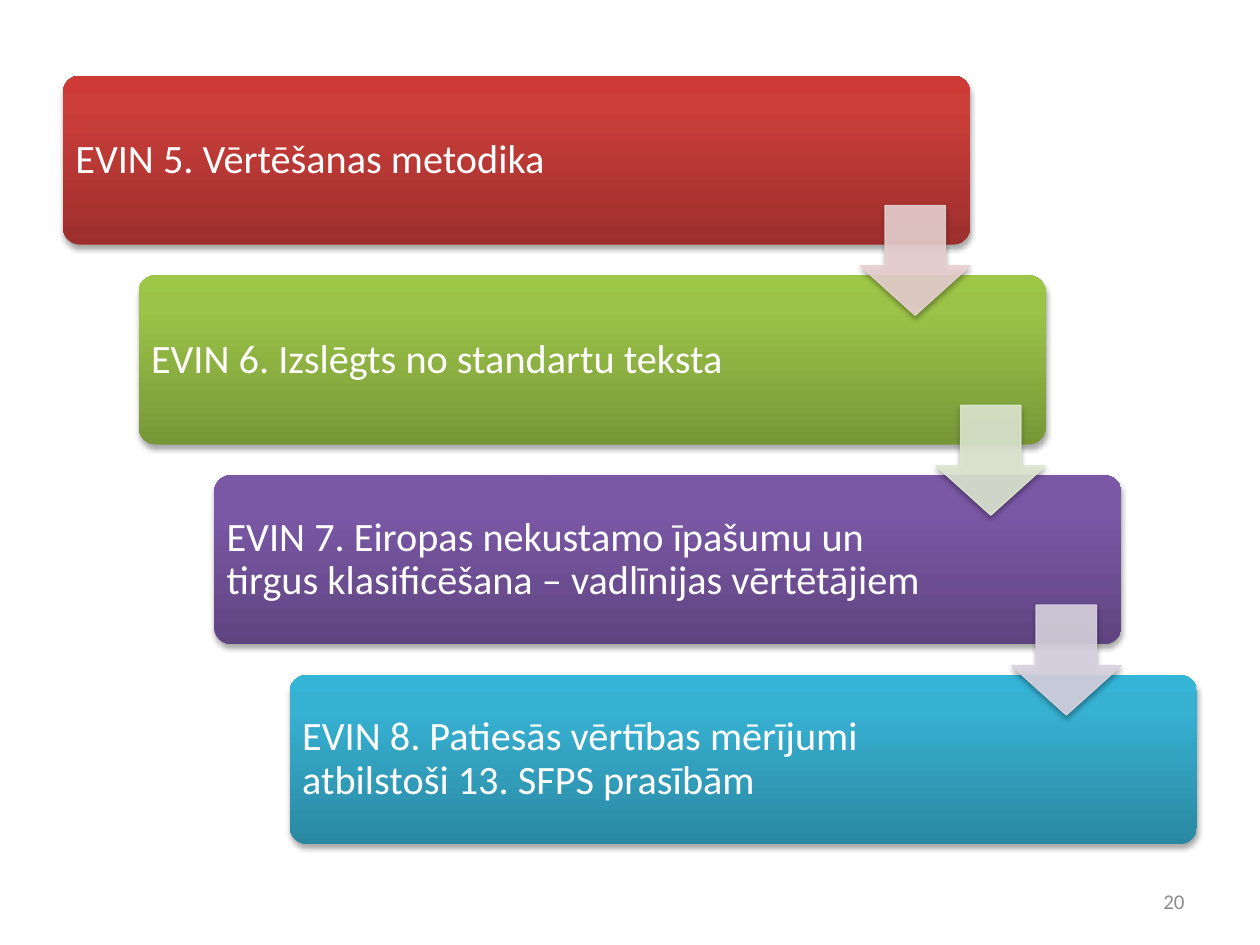
from pptx import Presentation
from pptx import util as u
from pptx.dml.color import RGBColor
from pptx.enum import shapes, text
from pptx.oxml import parse_xml
from pptx.oxml.ns import nsdecls, qn

WIDTH, HEIGHT = 10, 7.5
COLOURS = {
    "step_text": "FFFFFF",
    "page_text": "8C8C8C",
    "shadow": "000000",
    "red": ("9C2F2D", "CB3E3A", "CE3B37"),
    "green": ("779737", "9BC348", "9DC746"),
    "purple": ("5F4480", "7B58A6", "7C57A8"),
    "blue": ("2A88A2", "37B1D2", "34B4D6"),
    "red_arrow": "E8D0D0",
    "green_arrow": "DEE7D1",
    "purple_arrow": "D8D3E0",
}
STEPS = [
    ("red", "EVIN 5. Vērtēšanas metodika"),
    ("green", "EVIN 6. Izslēgts no standartu teksta"),
    ("purple", "EVIN 7. Eiropas nekustamo īpašumu un tirgus klasificēšana – vadlīnijas vērtētājiem"),
    ("blue", "EVIN 8. Patiesās vērtības mērījumi atbilstoši 13. SFPS prasībām"),
]
STAIRCASE = (0.05 * WIDTH, 0.08 * HEIGHT, 0.9 * WIDTH, 6.1)
PAGE_NUMBER = (7.17, 6.95, 2.33, 0.4)
CARD_WIDTH_SHARE = 0.8
CARD_HEIGHT_SHARE = 0.22
LABEL_SHARE = 0.795
ARROW_SHARE = 0.65
INSETS = dict.fromkeys(("margin_left", "margin_right", "margin_top", "margin_bottom"), u.Inches(0.1))


def apply_format(target, values):
    """Set each named attribute of the target."""
    for name, value in values.items():
        setattr(target, name, value)


def inches(box):
    """Convert a box in inches to lengths."""
    return [u.Inches(side) for side in box]


def add_shadow(part):
    """Give the part a soft shadow straight below it."""
    part.shadow.inherit = False
    effects = part._element.spPr.find(qn("a:effectLst"))
    effects.append(parse_xml(
        f'<a:outerShdw {nsdecls("a")} blurRad="{u.Pt(3.1)}" dist="{u.Pt(1.8)}" dir="5400000" '
        f'rotWithShape="0"><a:srgbClr val="{COLOURS["shadow"]}"><a:alpha val="35000"/>'
        '</a:srgbClr></a:outerShdw>'))


def add_label(slide, box, wording, colour, size, frame_format, paragraph_format):
    """Write one paragraph in a wrapped, vertically centred text box."""
    frame = slide.shapes.add_textbox(*inches(box)).text_frame
    apply_format(frame, {"word_wrap": True, "vertical_anchor": text.MSO_ANCHOR.MIDDLE, **frame_format})
    paragraph = frame.paragraphs[0]
    apply_format(paragraph, paragraph_format)
    run = paragraph.add_run()
    run.text = wording
    apply_format(run.font, {"name": "Calibri", "size": u.Pt(size)})
    run.font.color.rgb = RGBColor.from_string(COLOURS[colour])


def add_card(slide, box, colour, wording):
    """Place a rounded gradient card with its label."""
    left, top, width, height = box
    card = slide.shapes.add_shape(shapes.MSO_SHAPE.ROUNDED_RECTANGLE, *inches(box))
    card.adjustments[0] = 0.1
    card.fill.gradient()
    card.fill.gradient_angle = 90
    stops = card._element.spPr.find(qn("a:gradFill")).find(qn("a:gsLst"))
    for stop in list(stops):
        stops.remove(stop)
    for share, shade in zip((0, 80, 100), COLOURS[colour]):
        stops.append(parse_xml(
            f'<a:gs {nsdecls("a")} pos="{share * 1000}"><a:srgbClr val="{shade}"/></a:gs>'))
    card.line.fill.background()
    add_shadow(card)
    add_label(slide, (left, top, width * LABEL_SHARE, height), wording, "step_text", 23,
              INSETS, {"line_spacing": 0.9})


def add_arrow(slide, box, colour):
    """Place a translucent arrow that leads down to the next card."""
    arrow = slide.shapes.add_shape(shapes.MSO_SHAPE.DOWN_ARROW, *inches(box))
    arrow.adjustments[0], arrow.adjustments[1] = 0.55, 0.45
    arrow.line.width = u.Pt(0.75)
    for paint in (arrow.fill, arrow.line.fill):
        paint.solid()
        paint.fore_color.rgb = RGBColor.from_string(COLOURS[colour])
    for tint in arrow._element.spPr.iter(qn("a:srgbClr")):
        tint.append(parse_xml(f'<a:alpha {nsdecls("a")} val="90000"/>'))
    add_shadow(arrow)


def add_staircase(slide, box, steps):
    """Spread the cards diagonally over the box and link them by arrows."""
    left, top, width, height = box
    card_width, card_height = width * CARD_WIDTH_SHARE, height * CARD_HEIGHT_SHARE
    shift = (width - card_width) / (len(steps) - 1)
    drop = (height - card_height) / (len(steps) - 1)
    arrow_side = card_height * ARROW_SHARE
    for row, (colour, wording) in enumerate(steps):
        add_card(slide, (left + row * shift, top + row * drop, card_width, card_height), colour, wording)
    for row, (colour, _) in enumerate(steps[:-1]):
        arrow_left = left + row * shift + card_width - arrow_side
        arrow_top = top + row * drop + 0.65 * drop
        add_arrow(slide, (arrow_left, arrow_top, arrow_side, arrow_side), f"{colour}_arrow")


def main():
    """Build the slide and save it."""
    deck = Presentation()
    apply_format(deck, {"slide_width": u.Inches(WIDTH), "slide_height": u.Inches(HEIGHT)})
    slide = deck.slides.add_slide(deck.slide_layouts[6])
    add_staircase(slide, STAIRCASE, STEPS)
    add_label(slide, PAGE_NUMBER, "20", "page_text", 12, {}, {"alignment": text.PP_ALIGN.RIGHT})
    deck.save("out.pptx")


if __name__ == "__main__":
    main()
